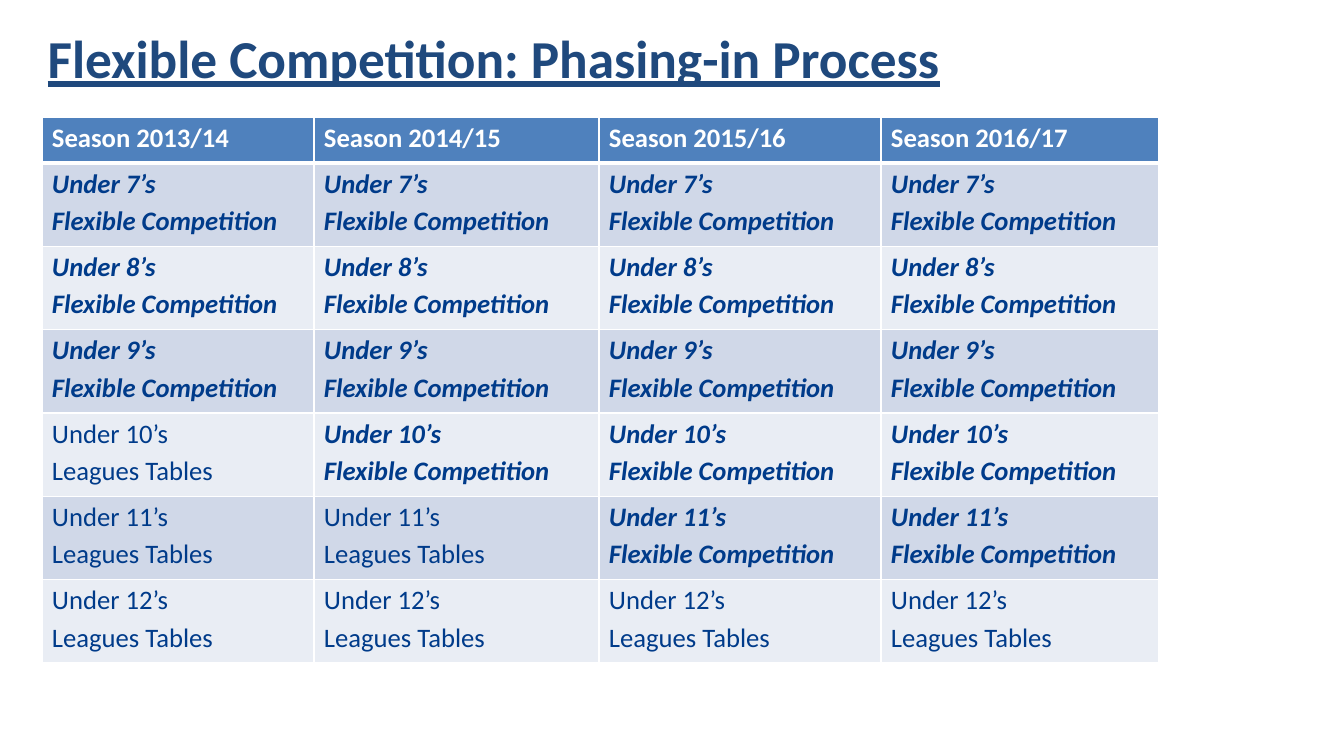
import dataclasses
import typing

import pptx
import pptx.dml.color
import pptx.enum.text
import pptx.oxml
import pptx.oxml.ns
import pptx.util

SCALE = 8572.5  # EMU in one px
FONT = "Calibri"
HUES = {"title": "1F497D", "head": "4F81BD", "text": "003B8A",
        "odd": "D0D8E8", "even": "E9EDF4", "white": "FFFFFF"}


@dataclasses.dataclass(frozen=True)
class Season:
    name: str
    width: int
    top_age: int  # oldest age group in flexible competition


SEASONS = [
    Season("Season 2013/14", 272, 9),
    Season("Season 2014/15", 285, 10),
    Season("Season 2015/16", 282, 11),
    Season("Season 2016/17", 278, 11),
]
AGES = range(7, 13)
HEAD_H, BODY_H = 46, 500


def px(num: float) -> int:
    return int(num * SCALE)


def rgb(name: str) -> pptx.dml.color.RGBColor:
    return pptx.dml.color.RGBColor.from_string(HUES[name])


def write(frame: typing.Any, *lines: str, size: int = 18, hue: str = "text",
          bold: bool = False, slant: bool = False, under: bool = False,
          space: float = 1.0) -> None:
    for num, line in enumerate(lines):
        para = frame.paragraphs[0] if num == 0 else frame.add_paragraph()
        para.alignment = pptx.enum.text.PP_ALIGN.LEFT
        para.line_spacing = space
        para.space_before = pptx.util.Pt(0)
        run = para.add_run()
        run.text = line
        font = run.font
        font.name, font.size = FONT, pptx.util.Pt(size)
        font.bold, font.italic, font.underline = bold, slant, under
        font.color.rgb = rgb(hue)


def style(cell: typing.Any, fill: str, base: float = 1) -> None:
    cell.margin_left = cell.margin_right = px(10)
    cell.margin_top = cell.margin_bottom = 0
    # Borders come before the fill in the cell properties
    props = cell._tc.get_or_add_tcPr()
    for side, width in (("L", 1), ("R", 1), ("T", 1), ("B", base)):
        props.append(pptx.oxml.parse_xml(
            f'<a:ln{side} {pptx.oxml.ns.nsdecls("a")} w="{pptx.util.Pt(width)}">'
            f'<a:solidFill><a:srgbClr val="{HUES["white"]}"/></a:solidFill>'
            f'</a:ln{side}>'))
    cell.fill.solid()
    cell.fill.fore_color.rgb = rgb(fill)


def add_title(slide: typing.Any) -> None:
    title = slide.shapes.title
    title.left, title.top, title.width, title.height = map(px, (37, 20, 1210, 59))
    frame = title.text_frame
    frame.word_wrap = True
    frame.auto_size = pptx.enum.text.MSO_AUTO_SIZE.NONE
    frame.vertical_anchor = pptx.enum.text.MSO_ANCHOR.TOP
    write(frame, "Flexible Competition: Phasing-in Process",
          size=36, hue="title", bold=True, under=True)


def add_plan(slide: typing.Any) -> None:
    wide = sum(season.width for season in SEASONS)
    table = slide.shapes.add_table(
        len(AGES) + 1, len(SEASONS),
        px(42), px(117), px(wide), px(HEAD_H + BODY_H)).table
    table.rows[0].height = px(HEAD_H)
    for row in range(1, len(AGES) + 1):
        table.rows[row].height = px(BODY_H / len(AGES))

    for col, season in enumerate(SEASONS):
        table.columns[col].width = px(season.width)
        # Header
        cell = table.cell(0, col)
        style(cell, "head", base=3)
        write(cell.text_frame, season.name, hue="white", bold=True, space=1.15)
        # Age groups
        for row, age in enumerate(AGES, 1):
            cell = table.cell(row, col)
            style(cell, "odd" if row % 2 else "even")
            flex = age <= season.top_age
            kind = "Flexible Competition" if flex else "Leagues Tables"
            write(cell.text_frame, f"Under {age}’s", kind,
                  bold=flex, slant=flex, space=1.15)


def main() -> None:
    deck = pptx.Presentation()
    deck.slide_width, deck.slide_height = px(1344), px(756)
    slide = deck.slides.add_slide(deck.slide_layouts[5])
    add_plan(slide)
    add_title(slide)
    deck.save("out.pptx")


if __name__ == "__main__":
    main()
